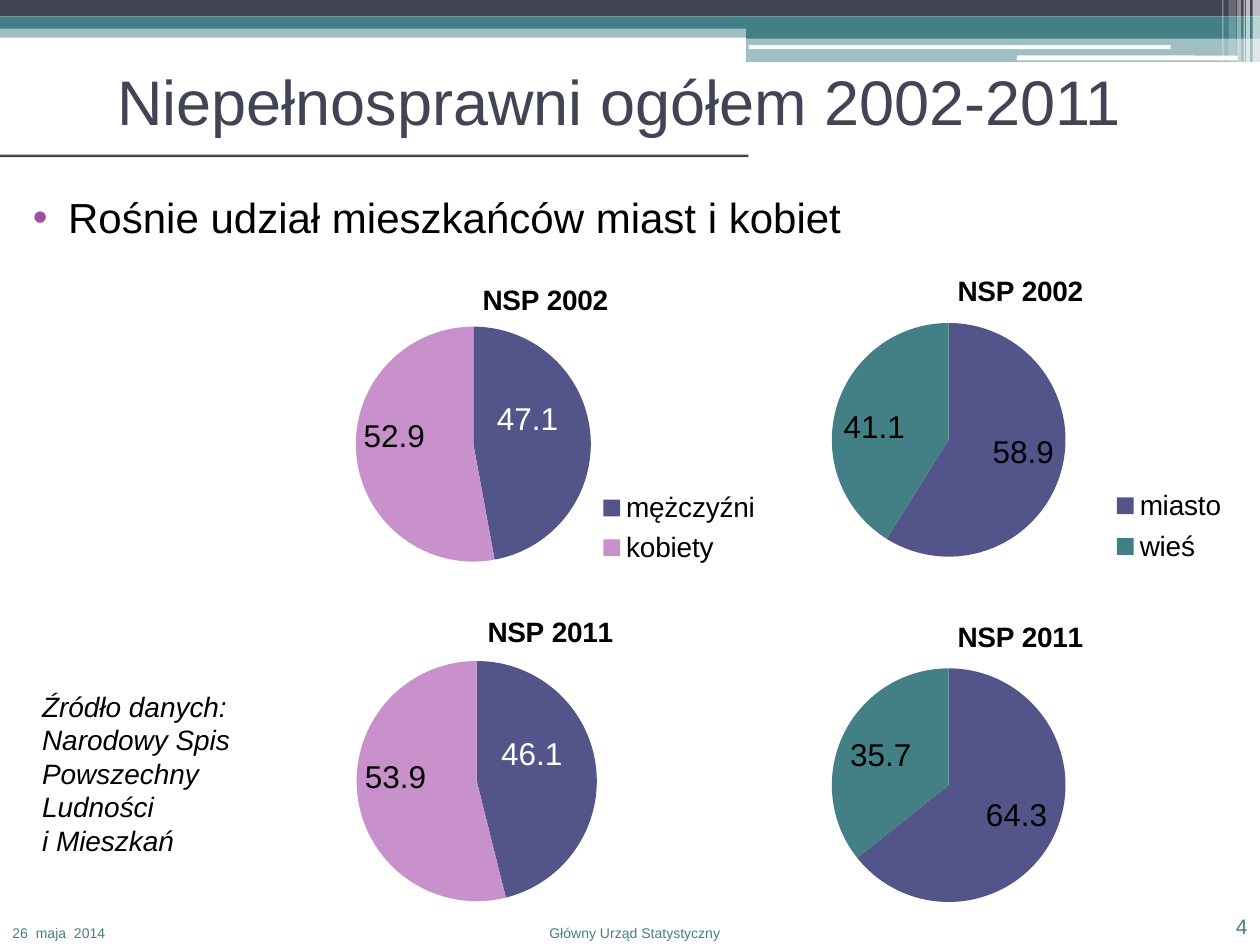
from lxml import etree
from pptx import Presentation
from pptx import util as u
from pptx.chart.data import CategoryChartData
from pptx.dml.color import RGBColor
from pptx.enum import chart as ch, shapes, text
from pptx.oxml import parse_xml
from pptx.oxml.ns import qn

FONT = "Arial"
NAVY, TEAL, INDIGO, PINK, PLUM = "424456", "438086", "53548A", "C991CB", "A04DA3"
BLACK, WHITE = "000000", "FFFFFF"
RECT, ROUND = shapes.MSO_SHAPE.RECTANGLE, shapes.MSO_SHAPE.ROUNDED_RECTANGLE

TITLE = "Niepełnosprawni ogółem 2002-2011"
POINT = "Rośnie udział mieszkańców miast i kobiet"
SOURCE = "Źródło danych: Narodowy Spis Powszechny Ludności \vi Mieszkań"
DATE, OFFICE, NUMBER = "26  maja  2014", "Główny Urząd Statystyczny", "4"

BANDS = [
    (RECT, 0, 0.53, 25.4, 0.23, TEAL, 50),
    (RECT, 0, 0, 25.4, 0.33, NAVY, 100),
    (RECT, 0, 0.33, 25.4, 0.25, TEAL, 100),
    (RECT, 15.04, 0.53, 10.36, 0.25, TEAL, 100),
    (RECT, 15.04, 0.74, 10.36, 0.51, TEAL, 50),
    (ROUND, 15.09, 0.91, 8.51, 0.08, WHITE, 100),
    (ROUND, 20.5, 1.12, 4.45, 0.1, WHITE, 100),
    (RECT, 0, 3.12, 15.09, 0.05, NAVY, 100),
]
STRIPES = [
    (25.25, 0.15, 1.73, 65),
    (25.12, 0.08, 1.73, 65),
    (25.07, 0.03, 1.73, 60),
    (24.94, 0.08, 1.73, 40),
    (24.77, 0.15, 1.63, 20),
    (24.64, 0.03, 1.63, 30),
]
RESIDENCE = {"names": ["miasto", "wieś"], "colours": [INDIGO, TEAL]}
SEX = {"names": ["mężczyźni", "kobiety"], "colours": [INDIGO, PINK], "white_first": True}
PIES = [
    ("NSP 2002", RESIDENCE, (58.9, 41.1), (16.1, 5.13, 8.94, 6.6), (0.68, 0.69, 0.31, 0.28)),
    ("NSP 2011", RESIDENCE, (64.3, 35.7), (16.1, 12.12, 8.94, 6.55), None),
    ("NSP 2002", SEX, (47.1, 52.9), (6.5, 5.33, 8.99, 6.4), (0.61, 0.69, 0.38, 0.28)),
    ("NSP 2011", SEX, (46.1, 53.9), (6.5, 12.01, 9.19, 6.6), None),
]
PLOT = (0.075, 0.171, 0.527, 0.791)
LABEL_SHIFT = (-0.01, -0.06)


def rgb(colour):
    return RGBColor.from_string(colour)


def style(font, size, colour=BLACK, bold=False, italic=False):
    font.name, font.size, font.bold, font.italic = FONT, u.Pt(size), bold, italic
    font.color.rgb = rgb(colour)


def place(part, left, top, width, height):
    part.left, part.top = u.Cm(left), u.Cm(top)
    part.width, part.height = u.Cm(width), u.Cm(height)


def write(part, words, size, colour=BLACK, italic=False, align=text.PP_ALIGN.LEFT,
          anchor=text.MSO_ANCHOR.TOP, indent=None, bullet=None):
    frame = part.text_frame
    frame.word_wrap = True
    frame.auto_size = text.MSO_AUTO_SIZE.NONE
    frame.vertical_anchor = anchor
    paragraph = frame.paragraphs[0]
    paragraph.text = words
    paragraph.alignment = align
    paragraph.space_before = u.Pt(0)
    props = paragraph._p.get_or_add_pPr()
    if indent:
        props.set("marL", str(u.Cm(indent[0])))
        props.set("indent", str(u.Cm(indent[1])))
    if bullet:
        tint = etree.SubElement(props, qn("a:buClr"))
        etree.SubElement(tint, qn("a:srgbClr"), val=bullet)
        etree.SubElement(props, qn("a:buFont"), typeface=FONT)
        etree.SubElement(props, qn("a:buChar"), char="•")
    for run in paragraph.runs:
        style(run.font, size, colour, italic=italic)


def add_band(slide, kind, left, top, width, height, colour, opacity):
    band = slide.shapes.add_shape(kind, u.Cm(left), u.Cm(top), u.Cm(width), u.Cm(height))
    band.shadow.inherit = False
    band.line.fill.background()
    band.fill.solid()
    band.fill.fore_color.rgb = rgb(colour)
    if opacity < 100:
        tint = band._element.spPr.find(".//" + qn("a:srgbClr"))
        etree.SubElement(tint, qn("a:alpha"), val=str(opacity * 1000))


def add_note(slide, box, words, size, **look):
    note = slide.shapes.add_textbox(*map(u.Cm, box))
    write(note, words, size, **look)


def manual_layout(values, plot=False):
    names = "xywh"[:len(values)]
    modes = "".join(f'<c:{n}Mode val="edge"/>' for n in "xy") if len(values) == 4 else ""
    sizes = "".join(f'<c:{n} val="{v}"/>' for n, v in zip(names, values))
    target = '<c:layoutTarget val="inner"/>' if plot else ""
    return parse_xml(
        '<c:layout xmlns:c="http://schemas.openxmlformats.org/drawingml/2006/chart">'
        f"<c:manualLayout>{target}{modes}{sizes}</c:manualLayout></c:layout>")


def set_layout(parent, layout, after=None):
    for old in parent.findall(qn("c:layout")):
        parent.remove(old)
    if after is None:
        parent.insert(0, layout)
    else:
        parent.find(qn(after)).addnext(layout)


def add_pie(slide, heading, group, values, box, legend_box):
    data = CategoryChartData(number_format="0.0")
    data.categories = group["names"]
    data.add_series(heading, values)
    chart = slide.shapes.add_chart(ch.XL_CHART_TYPE.PIE, *map(u.Cm, box), data).chart
    style(chart.font, 18)
    chart.has_title = True
    title = chart.chart_title.text_frame
    title.text = heading
    style(title.paragraphs[0].runs[0].font, 16, bold=True)
    set_layout(chart._chartSpace.chart.plotArea, manual_layout(PLOT, plot=True))

    pie = chart.plots[0]
    pie.vary_by_categories = True
    series = pie.series[0]
    for index, colour in enumerate(group["colours"]):
        fill = series.points[index].format.fill
        fill.solid()
        fill.fore_color.rgb = rgb(colour)
    labels = series.data_labels
    labels.show_value = True
    labels.show_percentage = False
    labels.number_format, labels.number_format_is_linked = "0.0", False
    labels.position = ch.XL_LABEL_POSITION.INSIDE_END
    style(labels.font, 18)
    if group.get("white_first"):
        label = series.points[0].data_label
        style(label.font, 18, WHITE)
        label.position = ch.XL_LABEL_POSITION.CENTER
        set_layout(series._element.find(".//" + qn("c:dLbl")),
                   manual_layout(LABEL_SHIFT), after="c:idx")

    chart.has_legend = legend_box is not None
    if legend_box:
        legend = chart.legend
        legend.position = ch.XL_LEGEND_POSITION.RIGHT
        legend.include_in_layout = False
        style(legend.font, 16)
        set_layout(legend._element, manual_layout(legend_box), after="c:legendPos")


def main():
    deck = Presentation()
    deck.slide_width, deck.slide_height = u.Cm(25.4), u.Cm(19.05)
    slide = deck.slides.add_slide(deck.slide_layouts[1])
    for band in BANDS:
        add_band(slide, *band)
    for left, width, height, opacity in STRIPES:
        add_band(slide, RECT, left, 0, width, height, WHITE, opacity)

    title, body = slide.placeholders
    place(title, 2.11, 1.32, 22.25, 1.4)
    write(title, TITLE, 36, colour=NAVY, anchor=text.MSO_ANCHOR.MIDDLE)
    place(body, 0.1, 3.73, 18.21, 1.6)
    write(body, POINT, 24, indent=(1.02, -0.71), bullet=PLUM)

    for pie in PIES:
        add_pie(slide, *pie)

    add_note(slide, (0.3, 13.77, 5, 5), SOURCE, 16, italic=True, indent=(0.3, 0))
    add_note(slide, (0, 18.52, 2.69, 0.53), DATE, 8, colour=TEAL)
    add_note(slide, (9.7, 18.52, 6.2, 0.53), OFFICE, 8, colour=TEAL,
             align=text.PP_ALIGN.CENTER)
    add_note(slide, (23.29, 18.31, 2.11, 0.74), NUMBER, 12, colour=TEAL,
             align=text.PP_ALIGN.RIGHT, anchor=text.MSO_ANCHOR.BOTTOM)
    deck.save("out.pptx")


if __name__ == "__main__":
    main()
